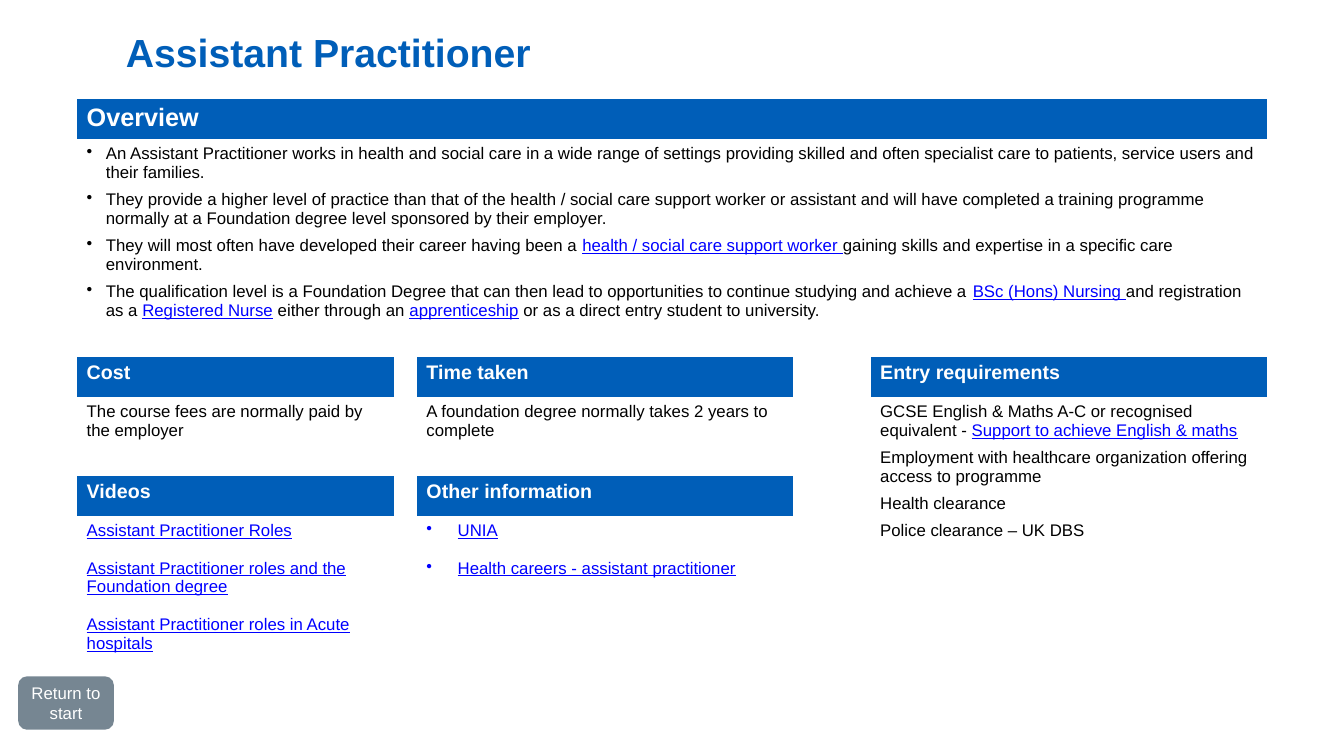
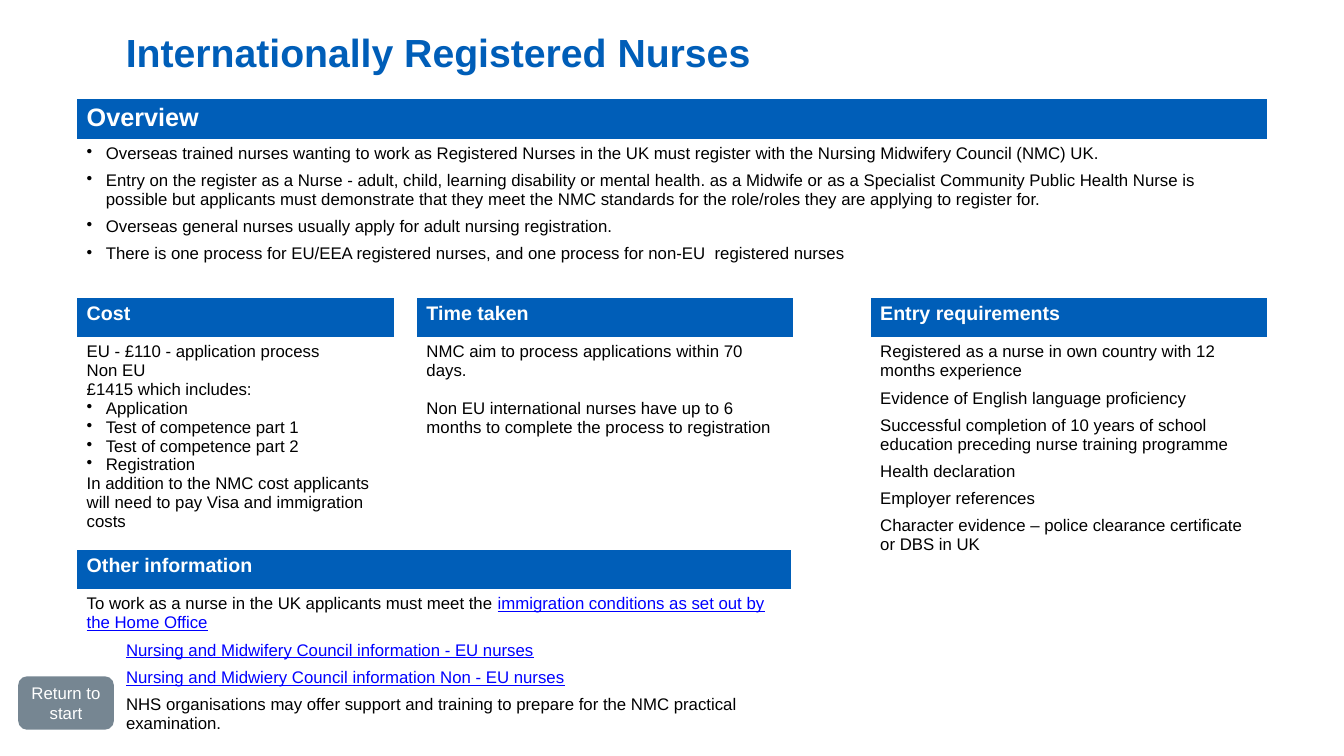
"""Build two career-route slides: a title, titled panels and a return button."""
from dataclasses import dataclass

from lxml.etree import SubElement
from pptx import Presentation
from pptx.dml.color import RGBColor
from pptx.enum.shapes import MSO_SHAPE
from pptx.enum.text import MSO_ANCHOR, PP_ALIGN
from pptx.oxml.ns import qn
from pptx.util import Inches, Pt


@dataclass(frozen=True)
class Theme:
    font: str = "Arial"
    blue: RGBColor = RGBColor(0x00, 0x5E, 0xB8)
    grey: RGBColor = RGBColor(0x76, 0x86, 0x92)
    link: RGBColor = RGBColor(0x00, 0x00, 0xFF)
    black: RGBColor = RGBColor(0x00, 0x00, 0x00)
    white: RGBColor = RGBColor(0xFF, 0xFF, 0xFF)
    title_size: int = 28
    overview_size: int = 18
    heading_size: int = 14
    body_size: int = 12


@dataclass(frozen=True)
class TextStyle:
    margin: float = 0
    bullet: bool = False
    after: float = 0


THEME = Theme()
LINE_GAP = 13.4

STYLES = {
    "plain": TextStyle(),
    "apart": TextStyle(after=LINE_GAP),
    "spaced": TextStyle(after=6),
    "indented": TextStyle(margin=0.39, after=6),
    "bullet": TextStyle(margin=0.19, bullet=True),
    "spaced bullet": TextStyle(margin=0.19, bullet=True, after=6),
    "apart bullet": TextStyle(margin=0.31, bullet=True, after=LINE_GAP),
}

COLUMNS = {
    "full": (0.76, 11.81),
    "left": (0.76, 3.15),
    "middle": (4.13, 3.74),
    "left and middle": (0.76, 7.09),
    "right": (8.63, 3.94),
}

OVERVIEW_TOP = 0.98
OVERVIEW_HEADER = 0.38
PANEL_HEADER = 0.4
RETURN_LABEL = "Return to start"
LINK_MARK = "|"

SLIDES = [
    {
        "title": "Assistant Practitioner",
        "overview_height": 2.35,
        "overview": [
            "An Assistant Practitioner works in health and social care in a wide range of settings providing "
            "skilled and often specialist care to patients, service users and their families.",
            "They provide a higher level of practice than that of the health / social care support worker or "
            "assistant and will have completed a training programme normally at a Foundation degree level "
            "sponsored by their employer.",
            "They will most often have developed their career having been a |health / social care support "
            "worker |gaining skills and expertise in a specific care environment.",
            "The qualification level is a Foundation Degree that can then lead to opportunities to continue "
            "studying and achieve a |BSc (Hons) Nursing |and registration as a |Registered Nurse| either "
            "through an |apprenticeship| or as a direct entry student to university.",
        ],
        "panels": [
            ("Cost", "left", 3.54, 1.15, [
                ("plain", "The course fees are normally paid by the employer"),
            ]),
            ("Time taken", "middle", 3.54, 1.15, [
                ("plain", "A foundation degree normally takes 2 years to complete"),
            ]),
            ("Videos", "left", 4.72, 2.08, [
                ("apart", "|Assistant Practitioner Roles|"),
                ("apart", "|Assistant Practitioner roles and the Foundation degree|"),
                ("plain", "|Assistant Practitioner roles in Acute hospitals|"),
            ]),
            ("Other information", "middle", 4.72, 1.33, [
                ("apart bullet", "|UNIA|"),
                ("apart bullet", "|Health careers - assistant practitioner|"),
            ]),
            ("Entry requirements", "right", 3.54, 2.15, [
                ("spaced", "GCSE English & Maths A-C or recognised equivalent - "
                           "|Support to achieve English & maths|"),
                ("spaced", "Employment with healthcare organization offering access to programme"),
                ("spaced", "Health clearance"),
                ("spaced", "Police clearance – UK DBS"),
            ]),
        ],
    },
    {
        "title": "Internationally Registered Nurses",
        "overview_height": 1.95,
        "overview": [
            "Overseas trained nurses wanting to work as Registered Nurses in the UK must register with the "
            "Nursing Midwifery Council (NMC) UK.",
            "Entry on the register as a Nurse - adult, child, learning disability or mental health. as a Midwife "
            "or as a Specialist Community Public Health Nurse is possible but applicants must demonstrate that "
            "they meet the NMC standards for the role/roles they are applying to register for.",
            "Overseas general nurses usually apply for adult nursing registration.",
            "There is one process for EU/EEA registered nurses, and one process for non-EU  registered nurses",
        ],
        "panels": [
            ("Cost", "left", 2.95, 2.5, [
                ("plain", "EU - £110 - application process"),
                ("plain", "Non EU"),
                ("plain", "£1415 which includes:"),
                ("bullet", "Application"),
                ("bullet", "Test of competence part 1"),
                ("bullet", "Test of competence part 2"),
                ("bullet", "Registration"),
                ("plain", "In addition to the NMC cost applicants will need to pay Visa and immigration costs"),
            ]),
            ("Time taken", "middle", 2.95, 1.5, [
                ("apart", "NMC aim to process applications within 70 days."),
                ("plain", "Non EU international nurses have up to 6 months to complete the process to "
                          "registration"),
            ]),
            ("Other information", "left and middle", 5.45, 1.95, [
                ("spaced", "To work as a nurse in the UK applicants must meet the "
                           "|immigration conditions as set out by the Home Office|"),
                ("indented", "|Nursing and Midwifery Council information - EU nurses|"),
                ("indented", "|Nursing and Midwiery Council information Non - EU nurses|"),
                ("indented", "NHS organisations may offer support and training to prepare for the NMC "
                             "practical examination."),
            ]),
            ("Entry requirements", "right", 2.95, 2.72, [
                ("spaced", "Registered as a nurse in own country with 12 months experience"),
                ("spaced", "Evidence of English language proficiency"),
                ("spaced", "Successful completion of 10 years of school education preceding nurse training "
                           "programme"),
                ("spaced", "Health declaration"),
                ("spaced", "Employer references"),
                ("spaced", "Character evidence – police clearance certificate or DBS in UK"),
            ]),
        ],
    },
]


def style_span(span, size, colour, bold=False, underline=False):
    span.font.name = THEME.font
    span.font.size = Pt(size)
    span.font.color.rgb = colour
    span.font.bold = bold
    span.font.underline = underline


def set_label(frame, text, size, colour, bold=False):
    frame.text = text
    style_span(frame.paragraphs[0].runs[0], size, colour, bold)


def fill_paragraph(para, style, text):
    properties = para._p.get_or_add_pPr()
    properties.set("marL", str(Inches(style.margin)))
    properties.set("indent", str(-Inches(style.margin) if style.bullet else 0))
    if style.bullet:
        SubElement(properties, qn("a:buChar")).set("char", "•")
    para.space_after = Pt(style.after)
    for position, piece in enumerate(text.split(LINK_MARK)):
        if piece:
            is_link = position % 2 == 1
            span = para.add_run()
            span.text = piece
            style_span(span, THEME.body_size, THEME.link if is_link else THEME.black, underline=is_link)


def add_panel(page, heading, column, top, height, lines, header=PANEL_HEADER, size=THEME.heading_size):
    left, width = COLUMNS[column]
    table = page.shapes.add_table(2, 1, Inches(left), Inches(top), Inches(width), Inches(height)).table
    table.horz_banding = False
    table.rows[0].height = Inches(header)
    table.rows[1].height = Inches(height - header)
    head, body = table.cell(0, 0), table.cell(1, 0)
    for cell, colour in ((head, THEME.blue), (body, THEME.white)):
        cell.fill.solid()
        cell.fill.fore_color.rgb = colour
    set_label(head.text_frame, heading, size, THEME.white, bold=True)
    frame = body.text_frame
    for index, (style_name, text) in enumerate(lines):
        para = frame.add_paragraph() if index else frame.paragraphs[0]
        fill_paragraph(para, STYLES[style_name], text)


def add_title(page, text):
    box = page.shapes.add_textbox(Inches(1.15), Inches(0.2), Inches(11.02), Inches(0.77))
    box.text_frame.word_wrap = True
    box.text_frame.margin_top = Inches(0.08)
    set_label(box.text_frame, text, THEME.title_size, THEME.blue, bold=True)


def add_return_button(page):
    button = page.shapes.add_shape(
        MSO_SHAPE.ROUNDED_RECTANGLE, Inches(0.18), Inches(6.71), Inches(0.95), Inches(0.53))
    button.shadow.inherit = False
    button.fill.solid()
    button.fill.fore_color.rgb = THEME.grey
    button.line.fill.background()
    frame = button.text_frame
    frame.word_wrap = True
    frame.vertical_anchor = MSO_ANCHOR.MIDDLE
    set_label(frame, RETURN_LABEL, THEME.body_size, THEME.white)
    frame.paragraphs[0].alignment = PP_ALIGN.CENTER


def main():
    deck = Presentation()
    deck.slide_width, deck.slide_height = Inches(13.33), Inches(7.5)
    for content in SLIDES:
        page = deck.slides.add_slide(deck.slide_layouts[6])
        add_title(page, content["title"])
        overview = [("spaced bullet", text) for text in content["overview"]]
        add_panel(page, "Overview", "full", OVERVIEW_TOP, content["overview_height"], overview,
                  OVERVIEW_HEADER, THEME.overview_size)
        for panel in content["panels"]:
            add_panel(page, *panel)
        add_return_button(page)
    deck.save("out.pptx")


if __name__ == "__main__":
    main()
